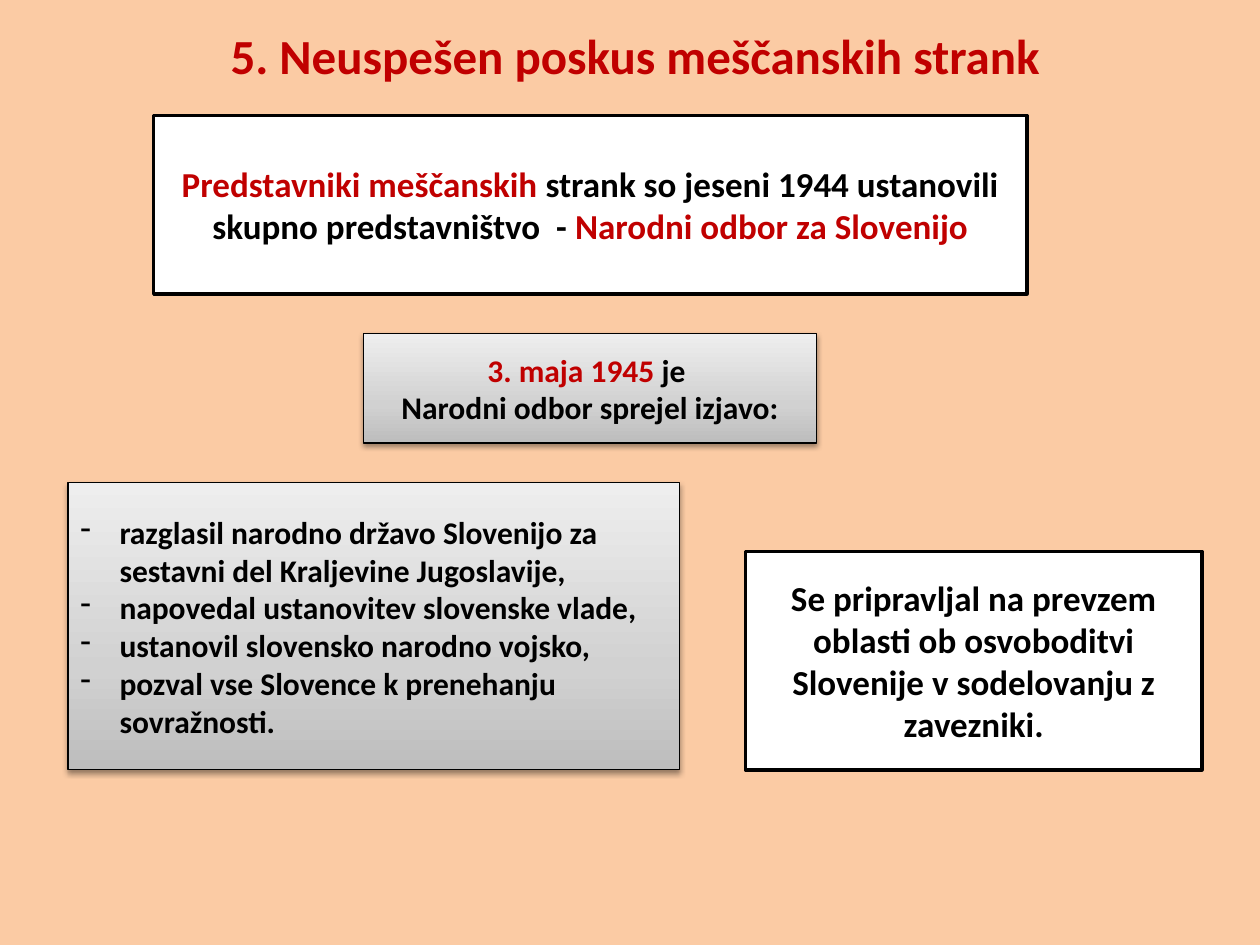
from dataclasses import dataclass

from lxml import etree
from pptx import Presentation
from pptx import util as u
from pptx.dml.color import RGBColor
from pptx.enum import shapes, text
from pptx.oxml.ns import qn


@dataclass(frozen=True)
class Theme:
    font: str = "Calibri"
    page: str = "FBCBA4"
    accent: str = "C00000"
    ink: str = "000000"
    paper: str = "FFFFFF"
    greys: tuple = ((0, "BDBDBD"), (35, "D1D1D1"), (100, "EEEEEE"))
    title_size: int = 28
    box_size: int = 20
    detail_size: int = 18


THEME = Theme()
INDENT = u.Cm(0.79)


def add_element(parent, tag, **values):
    child = etree.SubElement(parent, qn(tag))
    for name, value in values.items():
        child.set(name, str(value))
    return child


def set_values(target, values):
    for name, value in values.items():
        setattr(target, name, value)


def write_text(frame, paragraphs, size, align):
    """Each paragraph is a list of (words, colour) pairs."""
    set_values(frame, {"word_wrap": True, "vertical_anchor": text.MSO_ANCHOR.MIDDLE})
    for index, spans in enumerate(paragraphs):
        para = frame.paragraphs[0] if index == 0 else frame.add_paragraph()
        para.alignment = align
        for words, colour in spans:
            span = para.add_run()
            span.text = words
            set_values(span.font, {"name": THEME.font, "size": u.Pt(size), "bold": True})
            span.font.color.rgb = RGBColor.from_string(colour)


def add_box(page, place, line_width):
    box = page.shapes.add_shape(shapes.MSO_SHAPE.RECTANGLE, *map(u.Cm, place))
    box.shadow.inherit = False
    box.line.color.rgb = RGBColor.from_string(THEME.ink)
    box.line.width = u.Pt(line_width)
    return box


def white_box(page, place, paragraphs):
    box = add_box(page, place, 2)
    box.fill.solid()
    box.fill.fore_color.rgb = RGBColor.from_string(THEME.paper)
    write_text(box.text_frame, paragraphs, THEME.box_size, text.PP_ALIGN.CENTER)


def grey_box(page, place, paragraphs, align=text.PP_ALIGN.CENTER):
    box = add_box(page, place, 0.75)
    # Gradient, dark at the foot and light at the top
    box.fill.gradient()
    box.fill.gradient_angle = 90
    properties = box.element.spPr
    stops = properties.find(".//" + qn("a:gsLst"))
    for stop in list(stops):
        stops.remove(stop)
    for position, colour in THEME.greys:
        stop = add_element(stops, "a:gs", pos=position * 1000)
        add_element(stop, "a:srgbClr", val=colour)
    # Soft shadow straight below
    shadow = add_element(properties.find(qn("a:effectLst")), "a:outerShdw",
                         blurRad=u.Pt(3.1), dist=u.Pt(1.6), dir=90 * 60000, rotWithShape=0)
    colour = add_element(shadow, "a:srgbClr", val=THEME.ink)
    add_element(colour, "a:alpha", val=38000)
    write_text(box.text_frame, paragraphs, THEME.detail_size, align)
    return box


def dash_list(page, place, items):
    box = grey_box(page, place, [[(item, THEME.ink)] for item in items], text.PP_ALIGN.LEFT)
    for para in box.text_frame.paragraphs:
        properties = para._p.get_or_add_pPr()
        properties.set("marL", str(INDENT))
        properties.set("indent", str(-INDENT))
        add_element(properties, "a:buFontTx")
        add_element(properties, "a:buChar", char="-")


def place_title(page, place, words):
    title = page.shapes.title
    set_values(title, dict(zip(("left", "top", "width", "height"), map(u.Cm, place))))
    write_text(title.text_frame, [[(words, THEME.accent)]], THEME.title_size,
               text.PP_ALIGN.CENTER)


def main():
    deck = Presentation()
    set_values(deck, {"slide_width": u.Cm(25.4), "slide_height": u.Cm(19.05)})
    page = deck.slides.add_slide(deck.slide_layouts.get_by_name("Title Only"))
    page.background.fill.solid()
    page.background.fill.fore_color.rgb = RGBColor.from_string(THEME.page)

    place_title(page, (1.37, 0.33, 22.86, 1.55), "5. Neuspešen poskus meščanskih strank")

    # Founding of the committee
    white_box(page, (3.1, 2.33, 17.6, 3.6), [[
        ("Predstavniki meščanskih ", THEME.accent),
        ("strank so jeseni 1944 ustanovili skupno predstavništvo  - ", THEME.ink),
        ("Narodni odbor za Slovenijo", THEME.accent),
    ]])

    # Declaration and its points
    grey_box(page, (7.33, 6.73, 9.13, 2.2), [
        [("3. maja 1945 ", THEME.accent), ("je ", THEME.ink)],
        [("Narodni odbor sprejel izjavo:", THEME.ink)],
    ])
    dash_list(page, (1.37, 9.73, 12.33, 5.79), [
        "razglasil narodno državo Slovenijo za sestavni del Kraljevine Jugoslavije,",
        "napovedal ustanovitev slovenske vlade,",
        "ustanovil slovensko narodno vojsko,",
        "pozval vse Slovence k prenehanju sovražnosti.",
    ])

    # Plan for taking power
    white_box(page, (15.03, 11.12, 9.2, 4.4), [[
        ("Se pripravljal na prevzem oblasti ob osvoboditvi Slovenije "
         "v sodelovanju z zavezniki.", THEME.ink),
    ]])

    deck.save("out.pptx")


if __name__ == "__main__":
    main()
